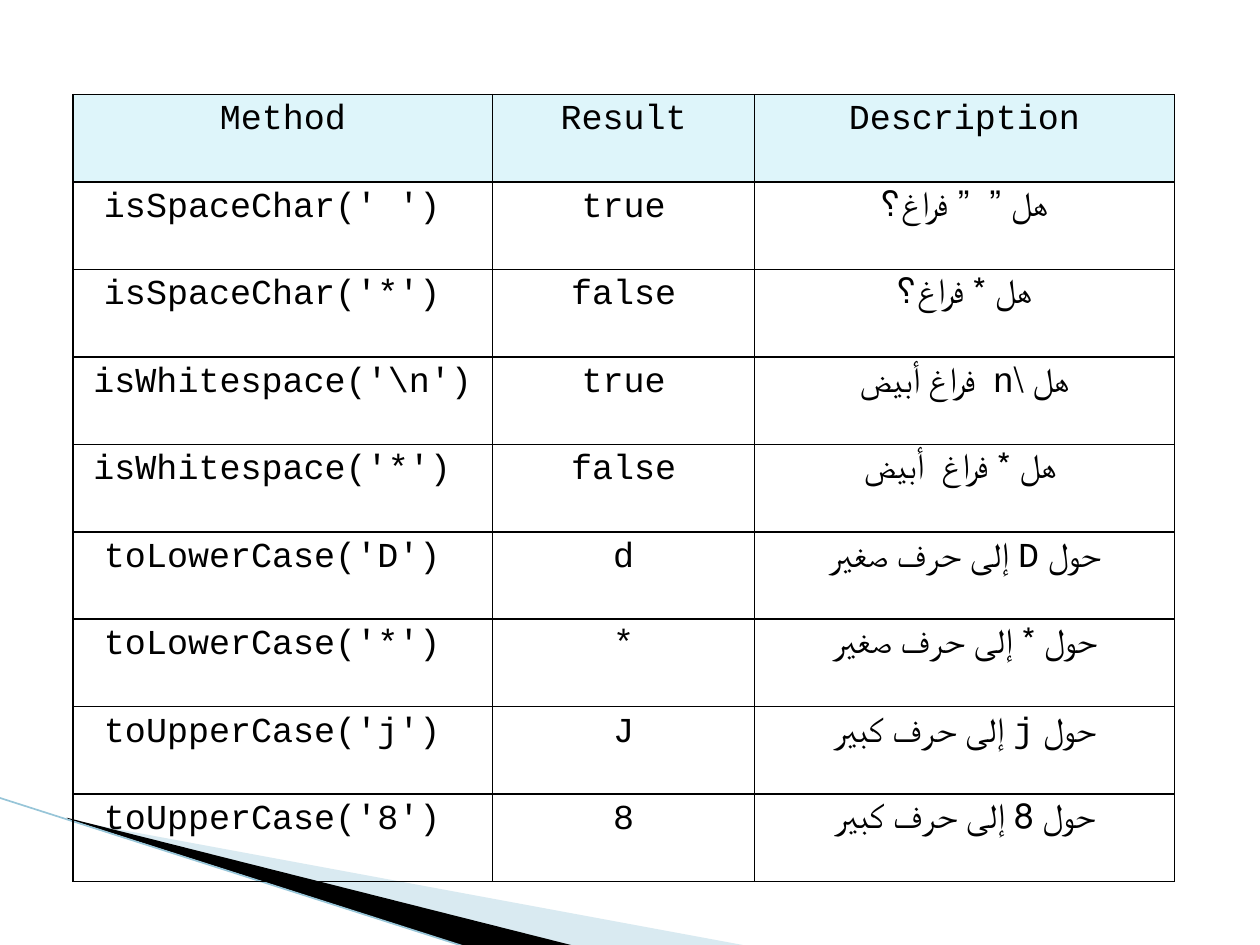
import pptx
import pptx.dml.color
import pptx.enum.text
import pptx.oxml
import pptx.oxml.ns
import pptx.util
from pptx.util import Inches

HEADINGS = ("Method", "Result", "Description")
METHODS = [
    ("isSpaceChar(' ') ", "true", "هل ”  ” فراغ؟"),
    ("isSpaceChar('*') ", "false", "هل * فراغ؟"),
    ("isWhitespace('\\n') ", "true", "هل \\n  فراغ أبيض"),
    ("isWhitespace('*') ", "false", " هل * فراغ  أبيض"),
    ("toLowerCase('D') ", "d", "حول D إلى حرف صغير"),
    ("toLowerCase('*') ", "*", "حول * إلى حرف صغير"),
    ("toUpperCase('j') ", "J", "حول j إلى حرف كبير"),
    ("toUpperCase('8') ", "8", "حول 8 إلى حرف كبير"),
]
COLUMN_WIDTHS = (3.33, 2.08, 3.33)
TABLE_LEFT, TABLE_TOP, TABLE_HEIGHT = 0.58, 0.75, 6.25
DESCRIPTION_COLUMN = 2

# Outline points, fill colour, opacity in percent
WEDGES = [
    ([(0.55, 6.51), (5.95, 7.51), (4.56, 7.51), (0.55, 6.5)], "A0CBDC", 40),
    ([(0.53, 6.49), (4.57, 7.51), (3.72, 7.52), (0.54, 6.5)], "000000", 100),
]
EDGE_START, EDGE_END = (-0.01, 6.33), (3.71, 7.52)


def rgb(value):
    return pptx.dml.color.RGBColor.from_string(value)


def add_wedge(shapes, points, color, opacity):
    builder = shapes.build_freeform(
        Inches(points[0][0]), Inches(points[0][1]))
    builder.add_line_segments([(Inches(x), Inches(y)) for x, y in points[1:]])
    wedge = builder.convert_to_shape()
    wedge.shadow.inherit = False
    wedge.line.fill.background()
    wedge.fill.solid()
    wedge.fill.fore_color.rgb = rgb(color)
    if opacity < 100:
        fill_color = wedge.fill._xPr.find(".//" + pptx.oxml.ns.qn("a:srgbClr"))
        fill_color.append(pptx.oxml.parse_xml(
            f'<a:alpha {pptx.oxml.ns.nsdecls("a")} val="{opacity * 1000}"/>'))


def add_edge(shapes):
    edge = shapes.add_connector(
        1, *(Inches(value) for value in EDGE_START + EDGE_END))
    edge.line.color.rgb = rgb("97C5D8")
    edge.line.width = pptx.util.Pt(0.95)
    edge._element.spPr.append(pptx.oxml.parse_xml(
        f'<a:effectLst {pptx.oxml.ns.nsdecls("a")}/>'))


def add_borders(cell):
    """Draw a thin black line on all four sides; call before filling."""
    properties = cell._tc.get_or_add_tcPr()
    for side in ("lnL", "lnR", "lnT", "lnB"):
        properties.append(pptx.oxml.parse_xml(
            f'<a:{side} {pptx.oxml.ns.nsdecls("a")} w="12700"><a:solidFill>'
            f'<a:srgbClr val="000000"/></a:solidFill></a:{side}>'))


def write_cell(cell, text, is_heading, right_to_left):
    add_borders(cell)
    if is_heading:
        cell.fill.solid()
        cell.fill.fore_color.rgb = rgb("DEF5FA")
    else:
        cell.fill.background()
    cell.text = text
    paragraph = cell.text_frame.paragraphs[0]
    paragraph.alignment = pptx.enum.text.PP_ALIGN.CENTER
    if right_to_left:
        paragraph._p.get_or_add_pPr().set("rtl", "1")
    paragraph.font.name = "Courier New"
    paragraph.font.size = pptx.util.Pt(20)
    paragraph.font.bold = False
    paragraph.font.color.rgb = rgb("000000")


def add_method_table(shapes):
    rows = [HEADINGS] + METHODS
    table = shapes.add_table(
        len(rows), len(HEADINGS), Inches(TABLE_LEFT), Inches(TABLE_TOP),
        Inches(sum(COLUMN_WIDTHS)), Inches(TABLE_HEIGHT)).table
    table.horz_banding = False
    for column, width in zip(table.columns, COLUMN_WIDTHS):
        column.width = Inches(width)
    for r, texts in enumerate(rows):
        for c, text in enumerate(texts):
            write_cell(table.cell(r, c), text, is_heading=r == 0,
                       right_to_left=r > 0 and c == DESCRIPTION_COLUMN)


def main():
    presentation = pptx.Presentation()
    presentation.slide_width = Inches(10)
    presentation.slide_height = Inches(7.5)
    shapes = presentation.slides.add_slide(
        presentation.slide_layouts[6]).shapes
    for points, color, opacity in WEDGES:
        add_wedge(shapes, points, color, opacity)
    add_edge(shapes)
    add_method_table(shapes)
    presentation.save("out.pptx")


if __name__ == "__main__":
    main()
